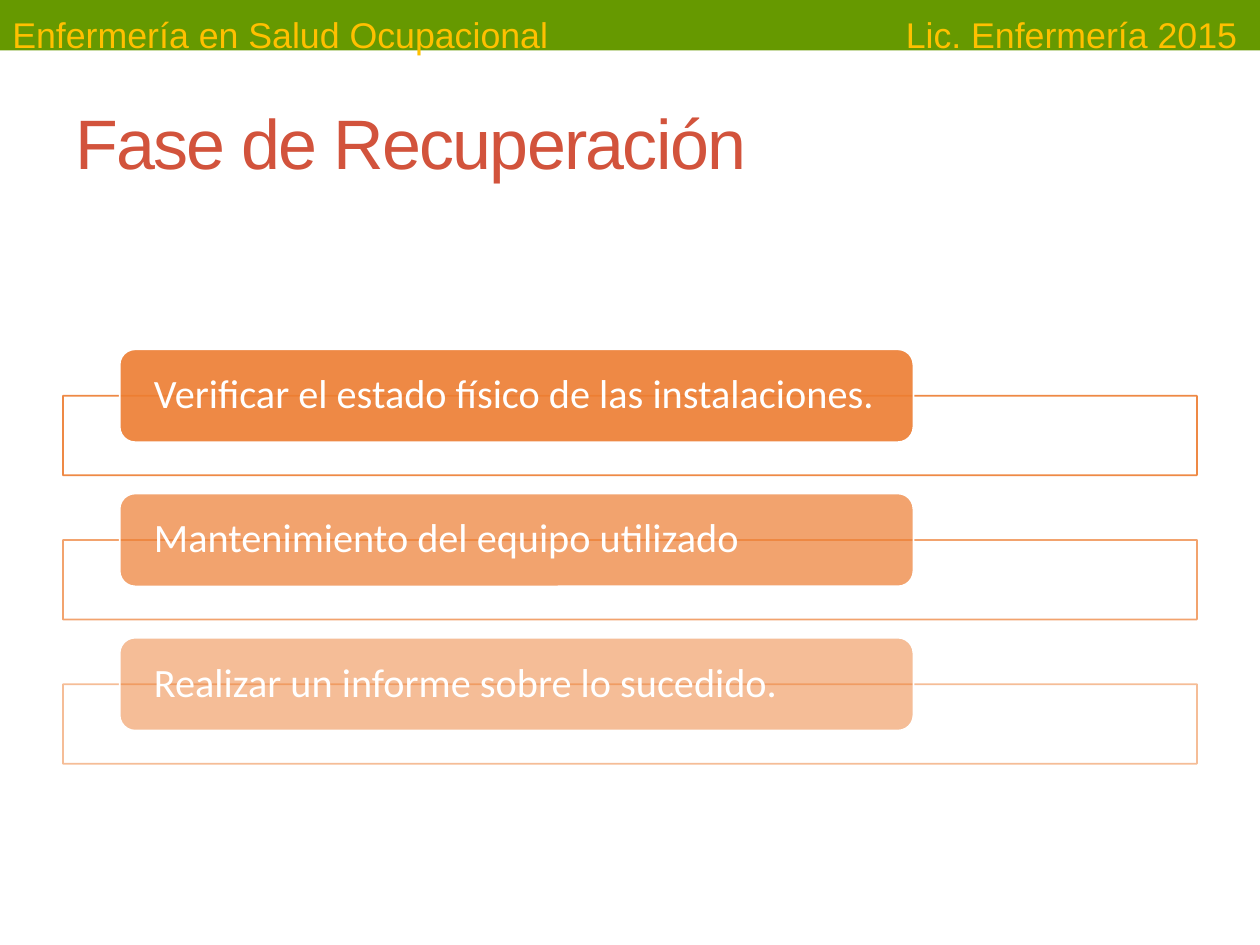
"""Build the recovery phase slide: green header, title and three steps."""
from pptx import Presentation, util as u
from pptx.dml import color
from pptx.enum import shapes, text
from pptx.oxml import ns
from lxml import etree

STEPS = [
    ("Verificar el estado físico de las instalaciones.", 90),
    ("Mantenimiento del equipo utilizado", 70),
    ("Realizar un informe sobre lo sucedido.", 50),
]
PITCH = 82.4


def paint(fill, code, alpha=100):
    """Make a fill solid in a hex colour with an opacity in percent."""
    fill.solid()
    fill.fore_color.rgb = color.RGBColor.from_string(code)
    if alpha < 100:
        tone = fill._xPr.find(ns.qn("a:solidFill"))[0]
        etree.SubElement(tone, ns.qn("a:alpha"), val=str(alpha * 1000))


def box(slide, kind, area, code, alpha=100, line=None, clear=100):
    """Add a filled preset shape with an optional outline."""
    shape = slide.shapes.add_shape(kind, *map(u.Pt, area))
    shape.shadow.inherit = False
    paint(shape.fill, code, alpha)
    if line:
        shape.line.width = u.Pt(1)
        paint(shape.line.fill, line, clear)
    else:
        shape.line.fill.background()
    return shape


def write(shape, words, size, code, font="Arial", mid=False, inset=None,
          before=None, after=None, lead=None, track=None):
    """Put one formatted, left-aligned paragraph in a shape."""
    frame = shape.text_frame
    frame.word_wrap = True
    anchor = text.MSO_ANCHOR
    frame.vertical_anchor = anchor.MIDDLE if mid else anchor.TOP
    if inset is not None:
        frame.margin_left = frame.margin_right = u.Pt(inset)
        frame.margin_top = frame.margin_bottom = 0
    para = frame.paragraphs[0]
    para.alignment = text.PP_ALIGN.LEFT
    para.line_spacing = lead
    if before is not None:
        para.space_before = u.Pt(before)
    if after is not None:
        para.space_after = u.Pt(after)
    run = para.add_run()
    run.text = words
    run.font.name, run.font.size = font, u.Pt(size)
    paint(run.font.fill, code)
    if track is not None:
        run.font._element.set("spc", str(track * 100))


def label(slide, area, words, **form):
    """Add a text box with formatted text."""
    write(slide.shapes.add_textbox(*map(u.Pt, area)), words, **form)


def header(slide):
    """Draw the green band with its two captions."""
    box(slide, shapes.MSO_SHAPE.RECTANGLE, (0, 0, 720, 28.8), "669900")
    for left, width, words in [
        (0, 332, "Enfermería en Salud Ocupacional"),
        (510.5, 209.5, "Lic. Enfermería 2015"),
    ]:
        label(slide, (left, 3.6, width, 28), words,
              size=20.4, code="FFC000", before=2)


def step(slide, top, words, alpha):
    """Draw one step: an outlined frame and a rounded bar with its text."""
    box(slide, shapes.MSO_SHAPE.RECTANGLE, (36, top + 26.6, 648, 45.4),
        "FFFFFF", 90, "ED7D31", alpha)
    bar = box(slide, shapes.MSO_SHAPE.ROUNDED_RECTANGLE,
              (68.4, top, 453.6, 53.1), "ED7D31", alpha, "FFFFFF")
    write(bar, words, 23, "FFFFFF", font="Calibri", mid=True,
          inset=17, after=8, lead=0.9)


def main():
    """Build and save the slide."""
    deck = Presentation()
    deck.slide_width, deck.slide_height = u.Pt(720), u.Pt(540)
    slide = deck.slides.add_slide(deck.slide_layouts[6])
    header(slide)
    label(slide, (36, 41.8, 648, 77.8), "Fase de Recuperación",
          size=40, code="D2533C", mid=True, track=-1)
    for row, (words, alpha) in enumerate(STEPS):
        step(slide, 199.6 + row * PITCH, words, alpha)
    deck.save("out.pptx")


if __name__ == "__main__":
    main()
